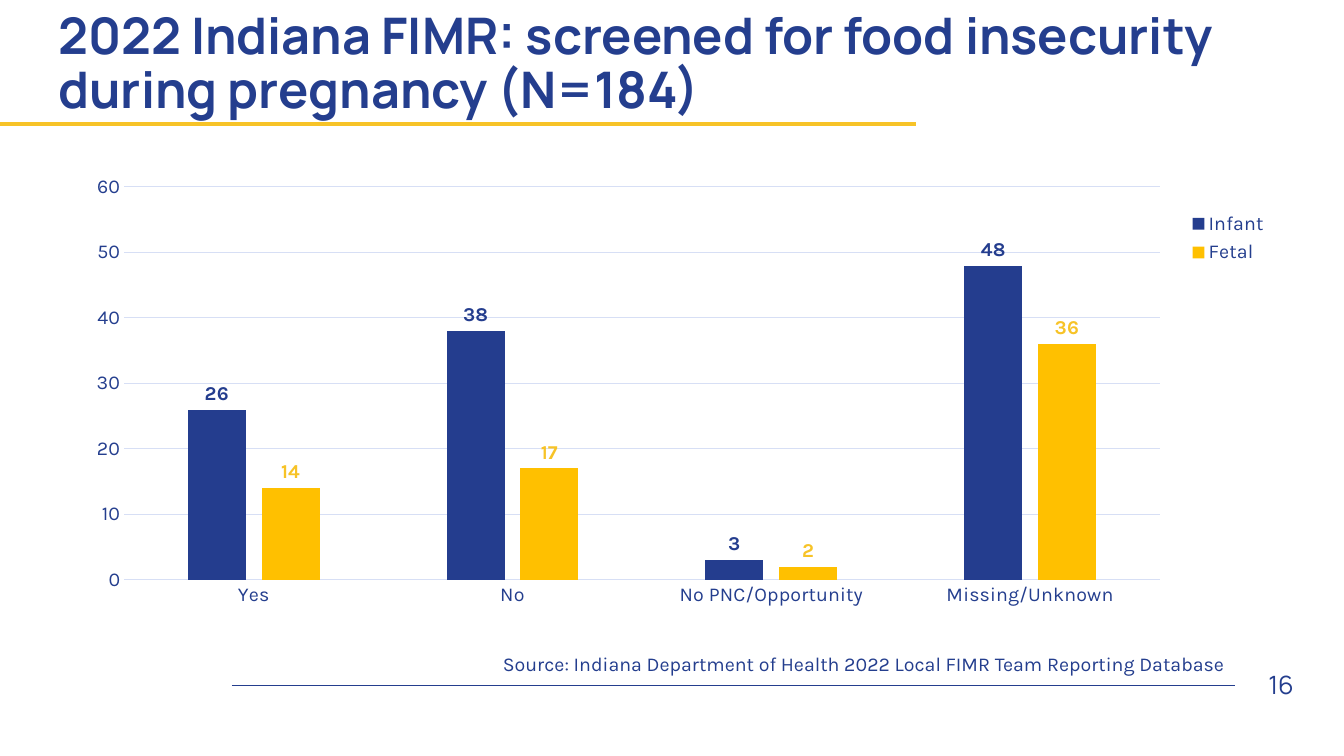
from lxml import etree
from pptx import Presentation
from pptx.chart.data import CategoryChartData
from pptx.dml.color import RGBColor
from pptx.enum.chart import XL_CHART_TYPE, XL_LABEL_POSITION, XL_LEGEND_POSITION, XL_TICK_MARK
from pptx.enum.shapes import MSO_CONNECTOR
from pptx.enum.text import MSO_ANCHOR, PP_ALIGN
from pptx.oxml import parse_xml
from pptx.oxml.ns import qn
from pptx.util import Inches, Pt

WIDTH, HEIGHT = Inches(13.33), Inches(7.5)
NAVY, GOLD, PALE = "243E8E", "F7C327", "D7DFF5"
HEADING, BODY = "Manrope", "Karla"
CATEGORIES = ["Yes", "No", "No PNC/Opportunity", "Missing/Unknown"]
SERIES = [  # name, values, bar colour, label colour
    ("Infant", [26, 38, 3, 48], "243D8E", "243D8E"),
    ("Fetal", [14, 17, 2, 36], "FFC000", GOLD),
]


def color(hex_string):
    return RGBColor.from_string(hex_string)


def across(percent):
    return int(WIDTH * percent / 100)


def down(percent):
    return int(HEIGHT * percent / 100)


def area(left, top, width, height):
    """Turn percentages of the slide into a position and size."""
    return across(left), down(top), across(width), down(height)


def style_font(font, name, size, hex_string, bold=False):
    font.name, font.size, font.bold = name, Pt(size), bold
    font.color.rgb = color(hex_string)


def style_line(line, hex_string, width):
    line.color.rgb = color(hex_string)
    line.width = Pt(width)


def add_rule(page, start, end, y, hex_string, width):
    rule = page.shapes.add_connector(
        MSO_CONNECTOR.STRAIGHT, across(start), down(y), across(end), down(y))
    style_line(rule.line, hex_string, width)
    etree.SubElement(rule._element.spPr, qn("a:effectLst"))


def add_text(page, place, text, name, size, bold=False,
             align=PP_ALIGN.LEFT, anchor=MSO_ANCHOR.MIDDLE, spacing=1.0):
    frame = page.shapes.add_textbox(*place).text_frame
    frame.word_wrap = True
    frame.vertical_anchor = anchor
    para = frame.paragraphs[0]
    para.text, para.alignment, para.line_spacing = text, align, spacing
    style_font(para.font, name, size, NAVY, bold)


def set_layout(parent, index, target="", **shares):
    """Fix the place of a chart part, as shares of the chart's size."""
    for layout in parent.findall(qn("c:layout")):
        parent.remove(layout)
    inner = f'<c:layoutTarget val="{target}"/>' if target else ""
    modes = '<c:xMode val="edge"/><c:yMode val="edge"/>'
    sizes = "".join(f'<c:{key} val="{share}"/>' for key, share in shares.items())
    parent.insert(index, parse_xml(
        '<c:layout xmlns:c="http://schemas.openxmlformats.org/drawingml/2006/chart">'
        f"<c:manualLayout>{inner}{modes}{sizes}</c:manualLayout></c:layout>"))


def style_axes(chart):
    for axis in (chart.category_axis, chart.value_axis):
        axis.major_tick_mark = axis.minor_tick_mark = XL_TICK_MARK.NONE
        style_font(axis.tick_labels.font, BODY, 14, NAVY)
    style_line(chart.category_axis.format.line, PALE, 0.75)
    values = chart.value_axis
    values.minimum_scale, values.maximum_scale, values.major_unit = 0, 60, 10
    values.format.line.fill.background()
    style_line(values.major_gridlines.format.line, PALE, 0.75)


def style_series(series, bar_color, label_color):
    series.format.fill.solid()
    series.format.fill.fore_color.rgb = color(bar_color)
    labels = series.data_labels
    labels.show_value = True
    labels.position = XL_LABEL_POSITION.OUTSIDE_END
    style_font(labels.font, BODY, 14, label_color, True)


def add_screening_chart(page, place):
    data = CategoryChartData()
    data.categories = CATEGORIES
    for name, values, *_ in SERIES:
        data.add_series(name, values)
    chart = page.shapes.add_chart(XL_CHART_TYPE.COLUMN_CLUSTERED, *place, data).chart
    chart.has_title = False
    style_font(chart.font, BODY, 14, NAVY)
    style_axes(chart)

    plot = chart.plots[0]
    plot.gap_width, plot.overlap, plot.vary_by_categories = 219, -27, False
    for series, (*_, bar_color, label_color) in zip(plot.series, SERIES):
        style_series(series, bar_color, label_color)

    chart.has_legend = True
    legend = chart.legend
    legend.position = XL_LEGEND_POSITION.RIGHT
    legend.include_in_layout = False
    style_font(legend.font, BODY, 14, NAVY)
    set_layout(legend._element, 1, x=0.92, y=0.09, w=0.08, h=0.14)
    set_layout(chart._chartSpace.chart.plotArea, 0, "inner",
               x=0.043, y=0.046, w=0.86, h=0.874)


def main():
    deck = Presentation()
    deck.slide_width, deck.slide_height = WIDTH, HEIGHT
    page = deck.slides.add_slide(deck.slide_layouts[6])

    add_rule(page, 17.25, 91.9, 90.67, NAVY, 1)
    add_rule(page, 0, 68.19, 16.4, GOLD, 3)
    add_text(page, area(3.6, 3.07, 89.57, 11.07),
             "2022 Indiana FIMR: screened for food insecurity during pregnancy (N=184)",
             HEADING, 36, bold=True, spacing=0.9)
    add_text(page, area(91.9, 87.87, 5.1, 5.33), "16", HEADING, 18,
             align=PP_ALIGN.RIGHT)
    add_text(page, area(22.13, 85.6, 69.77, 4.53),
             "Source: Indiana Department of Health 2022 Local FIMR Team Reporting Database",
             BODY, 14, align=PP_ALIGN.RIGHT, anchor=MSO_ANCHOR.TOP)
    add_screening_chart(page, area(5.4, 22, 89.57, 59.47))

    deck.save("out.pptx")


if __name__ == "__main__":
    main()
